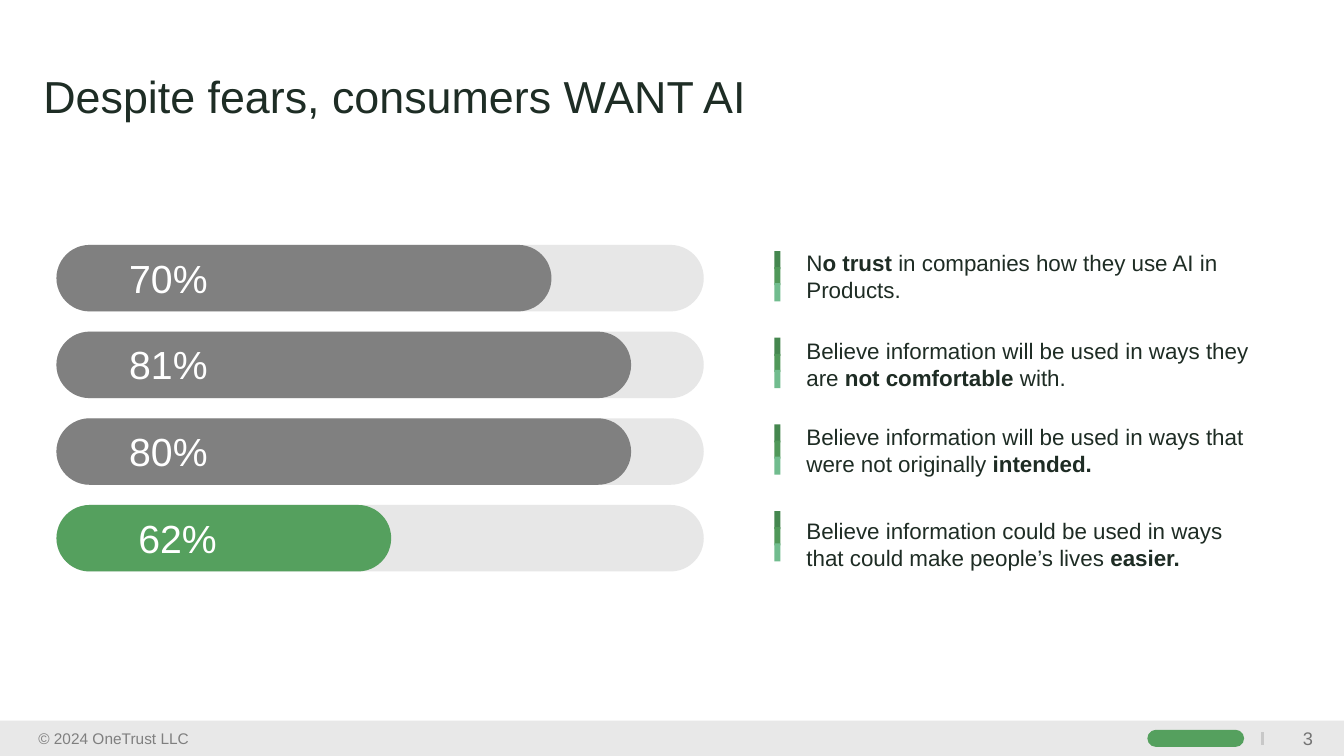
from lxml import etree
from pptx import Presentation
from pptx.dml.color import RGBColor
from pptx.enum.shapes import MSO_CONNECTOR, MSO_SHAPE
from pptx.enum.text import MSO_ANCHOR, MSO_AUTO_SIZE, PP_ALIGN
from pptx.oxml.ns import qn
from pptx.util import Inches, Pt

RECTANGLE = MSO_SHAPE.RECTANGLE
PILL = MSO_SHAPE.ROUNDED_RECTANGLE
STRAIGHT = MSO_CONNECTOR.STRAIGHT
TOP, MIDDLE = MSO_ANCHOR.TOP, MSO_ANCHOR.MIDDLE
LEFT, CENTER, RIGHT = PP_ALIGN.LEFT, PP_ALIGN.CENTER, PP_ALIGN.RIGHT
NO_AUTOFIT = MSO_AUTO_SIZE.NONE
TITLE_ONLY = 5

FONT = "Arial"
GREEN, GRAY, TRACK = "55A05E", "808080", "E7E7E7"
MARKER_COLORS = ("45874F", "509859", "71BC8E")
BAR_LEFT, BAR_HEIGHT, TRACK_WIDTH = 0.56, 0.66, 6.42
FIRST_ROW_TOP, ROW_STEP = 2.43, 0.86

ROWS = [
    {"percent": "70%", "percent_left": 0.56, "width": 4.91, "color": GRAY, "caption_top": 2.42,
     "caption": [("N", False), ("o trust", True),
                 (" in companies how they use AI in Products.", False)]},
    {"percent": "81%", "percent_left": 0.56, "width": 5.7, "color": GRAY, "caption_top": 3.3,
     "caption": [("Believe information will be used in ways they are ", False),
                 ("not comfortable", True), (" with.", False)]},
    {"percent": "80%", "percent_left": 0.56, "width": 5.7, "color": GRAY, "caption_top": 4.15,
     "caption": [("Believe information will be used in ways that were not originally ", False),
                 ("intended.", True)]},
    {"percent": "62%", "percent_left": 0.65, "width": 3.32, "color": GREEN, "caption_top": 5.08,
     "caption": [("Believe information could be used in ways that could make people’s lives", False),
                 (" easier.", True)]},
]


def rgb(value):
    """Turn a hex string into a colour."""
    return RGBColor.from_string(value)


def set_attributes(target, values):
    """Set every attribute named in a dict."""
    for name, value in values.items():
        setattr(target, name, value)


def add_block(slide, kind, box, color):
    """Add a filled shape without line or shadow."""
    shape = slide.shapes.add_shape(kind, *map(Inches, box))
    shape.shadow.inherit = False
    shape.fill.solid()
    shape.fill.fore_color.rgb = rgb(color)
    shape.line.fill.background()
    if kind == PILL:
        shape.adjustments[0] = 0.5
    return shape


def write_runs(frame, runs, size, color, align=LEFT):
    """Write (text, bold) runs into the first paragraph of a frame."""
    paragraph = frame.paragraphs[0]
    paragraph.alignment = align
    for text, bold in runs:
        run = paragraph.add_run()
        run.text = text
        set_attributes(run.font, {"name": FONT, "size": Pt(size), "bold": bold})
        run.font.color.rgb = rgb(color)


def add_text(slide, box, runs, size, color, align=LEFT, anchor=TOP, side=0.1):
    """Add a wrapping text box."""
    frame = slide.shapes.add_textbox(*map(Inches, box)).text_frame
    set_attributes(frame, {
        "word_wrap": True,
        "vertical_anchor": anchor,
        "margin_left": Inches(side),
        "margin_right": Inches(side),
    })
    write_runs(frame, runs, size, color, align)


def add_title(slide, text):
    """Place and format the title placeholder."""
    title = slide.shapes.title
    set_attributes(title, {
        "left": Inches(0.33),
        "top": Inches(0.63),
        "width": Inches(12.62),
        "height": Inches(0.7),
    })
    set_attributes(title.text_frame, {
        "word_wrap": True,
        "auto_size": NO_AUTOFIT,
        "vertical_anchor": MIDDLE,
    })
    write_runs(title.text_frame, [(text, False)], 32, "1E2D25")
    title.text_frame.paragraphs[0].line_spacing = 0.9


def add_footer(slide):
    """Add the bottom band with copyright line, divider and page number."""
    add_block(slide, RECTANGLE, (0, 7.15, 13.33, 0.35), "E8E8E8")
    divider = slide.shapes.add_connector(
        STRAIGHT, Inches(12.52), Inches(7.39), Inches(12.52), Inches(7.26))
    divider.line.color.rgb = rgb("C8C8C8")
    divider.line.width = Pt(2)
    etree.SubElement(divider.element.spPr, qn("a:effectLst"))
    add_block(slide, PILL, (11.38, 7.24, 0.96, 0.17), GREEN)
    add_text(slide, (0.35, 7.21, 3.47, 0.24), [("© 2024 OneTrust LLC", False)],
             11, "7F7F7F", anchor=MIDDLE, side=0.03)
    add_text(slide, (12.56, 7.19, 0.56, 0.27), [("3", False)],
             13, "747474", align=RIGHT, anchor=MIDDLE)


def add_marker(slide, top):
    """Add the three-tone vertical marker beside a caption."""
    for index, color in enumerate(MARKER_COLORS):
        add_block(slide, RECTANGLE, (7.68, top + index * 0.16, 0.06, 0.18), color)


def add_row(slide, top, row):
    """Add one progress bar with its percentage, marker and caption."""
    add_block(slide, PILL, (BAR_LEFT, top, TRACK_WIDTH, BAR_HEIGHT), TRACK)
    add_block(slide, PILL, (BAR_LEFT, top, row["width"], BAR_HEIGHT), row["color"])
    add_text(slide, (row["percent_left"], top + 0.04, 2.22, 0.57),
             [(row["percent"], False)], 28, "FFFFFF", align=CENTER)
    add_marker(slide, top + 0.06)
    add_text(slide, (7.9, row["caption_top"], 4.7, 0.64), row["caption"], 16, "1E2C24")


def main():
    """Build and save the slide."""
    presentation = Presentation()
    presentation.slide_width = Inches(13.33)
    presentation.slide_height = Inches(7.5)
    slide = presentation.slides.add_slide(presentation.slide_layouts[TITLE_ONLY])
    add_footer(slide)
    add_title(slide, "Despite fears, consumers WANT AI")
    for index, row in enumerate(ROWS):
        add_row(slide, FIRST_ROW_TOP + index * ROW_STEP, row)
    presentation.save("out.pptx")


if __name__ == "__main__":
    main()
